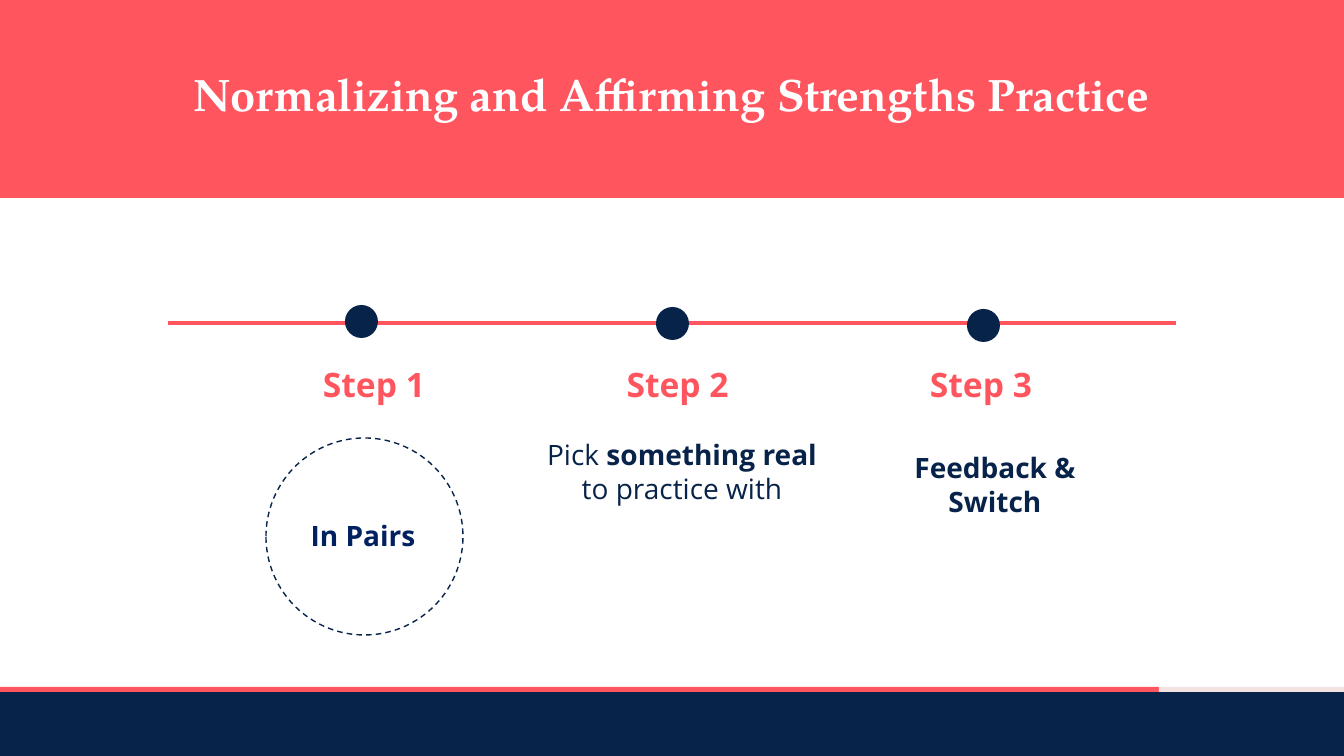
from lxml.etree import SubElement
from pptx import Presentation
from pptx.dml.color import RGBColor
from pptx.enum.dml import MSO_LINE
from pptx.enum.shapes import MSO_CONNECTOR, MSO_SHAPE
from pptx.enum.text import MSO_ANCHOR, PP_ALIGN
from pptx.oxml.ns import qn
from pptx.util import Emu, Pt

CORAL = RGBColor(0xFF, 0x55, 0x5E)
NAVY = RGBColor(0x08, 0x23, 0x49)
BLUE = RGBColor(0x00, 0x20, 0x60)
BLUSH = RGBColor(0xF3, 0xE2, 0xE2)
WHITE = RGBColor(0xFF, 0xFF, 0xFF)

WIDE, HIGH = 1344, 756
SCALE = 12192000 / WIDE
SANS = "Open Sans"
SERIF = "TeX Gyre Pagella"

BANDS = [
    (0, 0, WIDE, 198, CORAL),
    (0, 692, WIDE, 64, NAVY),
    (0, 687, 1159, 5, CORAL),
    (1159, 687, 185, 5, BLUSH),
]
STEPS = [(236, "Step 1"), (544, "Step 2 "), (843, "Step 3")]
NOTES = [
    (285, 514, 156, 44, BLUE, [("In Pairs", True)]),
    (524, 433, 316, 78, NAVY,
     [("Pick ", False), ("something real ", True), ("to practice with", False)]),
    (891, 446, 208, 78, NAVY, [("Feedback & Switch", True)]),
]


def px(*sizes):
    return [Emu(round(size * SCALE)) for size in sizes]


def add_form(slide, kind, box, fill=None):
    form = slide.shapes.add_shape(kind, *px(*box))
    form.shadow.inherit = False
    if fill is None:
        form.fill.background()
    else:
        form.fill.solid()
        form.fill.fore_color.rgb = fill
        form.line.fill.background()
    return form


def add_ring(slide, box):
    ring = add_form(slide, MSO_SHAPE.OVAL, box)
    ring.line.color.rgb = NAVY
    ring.line.width = Pt(1)
    ring.line.dash_style = MSO_LINE.DASH


def add_line(slide, left, right, top):
    line = slide.shapes.add_connector(
        MSO_CONNECTOR.STRAIGHT, *px(left, top, right, top))
    line.line.color.rgb = CORAL
    line.line.width = Pt(2.25)
    SubElement(line._element.spPr, qn("a:effectLst"))


def add_runs(frame, runs, font, size, color):
    frame.word_wrap = True
    para = frame.paragraphs[0]
    para.alignment = PP_ALIGN.CENTER
    for text, bold in runs:
        run = para.add_run()
        run.text = text
        run.font.name = font
        run.font.size = Pt(size)
        run.font.bold = bold
        run.font.color.rgb = color
    return para


def add_text(slide, box, runs, size, color):
    frame = slide.shapes.add_textbox(*px(*box)).text_frame
    add_runs(frame, runs, SANS, size, color)


def set_title(slide, text):
    title = slide.shapes.title
    title.left, title.top, title.width, title.height = px(33, 68, 1277, 58)
    frame = title.text_frame
    frame.vertical_anchor = MSO_ANCHOR.MIDDLE
    frame.margin_top = frame.margin_bottom = 0
    para = add_runs(frame, [(text, True)], SERIF, 32.4, WHITE)
    para.line_spacing = 0.9
    tree = slide.shapes._spTree
    tree.remove(title._element)
    tree.append(title._element)


def main():
    deck = Presentation()
    deck.slide_width, deck.slide_height = px(WIDE, HIGH)
    slide = deck.slides.add_slide(deck.slide_layouts[5])
    for *box, color in BANDS:
        add_form(slide, MSO_SHAPE.RECTANGLE, box, color)
    set_title(slide, "Normalizing and Affirming Strengths Practice")
    add_line(slide, 168, 1176, 323)
    add_ring(slide, (266, 438, 197, 197))
    for *box, color, runs in NOTES:
        add_text(slide, box, runs, 20, color)
    for i, (left, label) in enumerate(STEPS):
        add_text(slide, (left, 359, 276, 50), [(label, True)], 24, CORAL)
        dot = (345 + 311 * i, 305 + 2 * i, 33, 33)
        add_form(slide, MSO_SHAPE.OVAL, dot, NAVY)
    deck.save("out.pptx")


if __name__ == "__main__":
    main()
